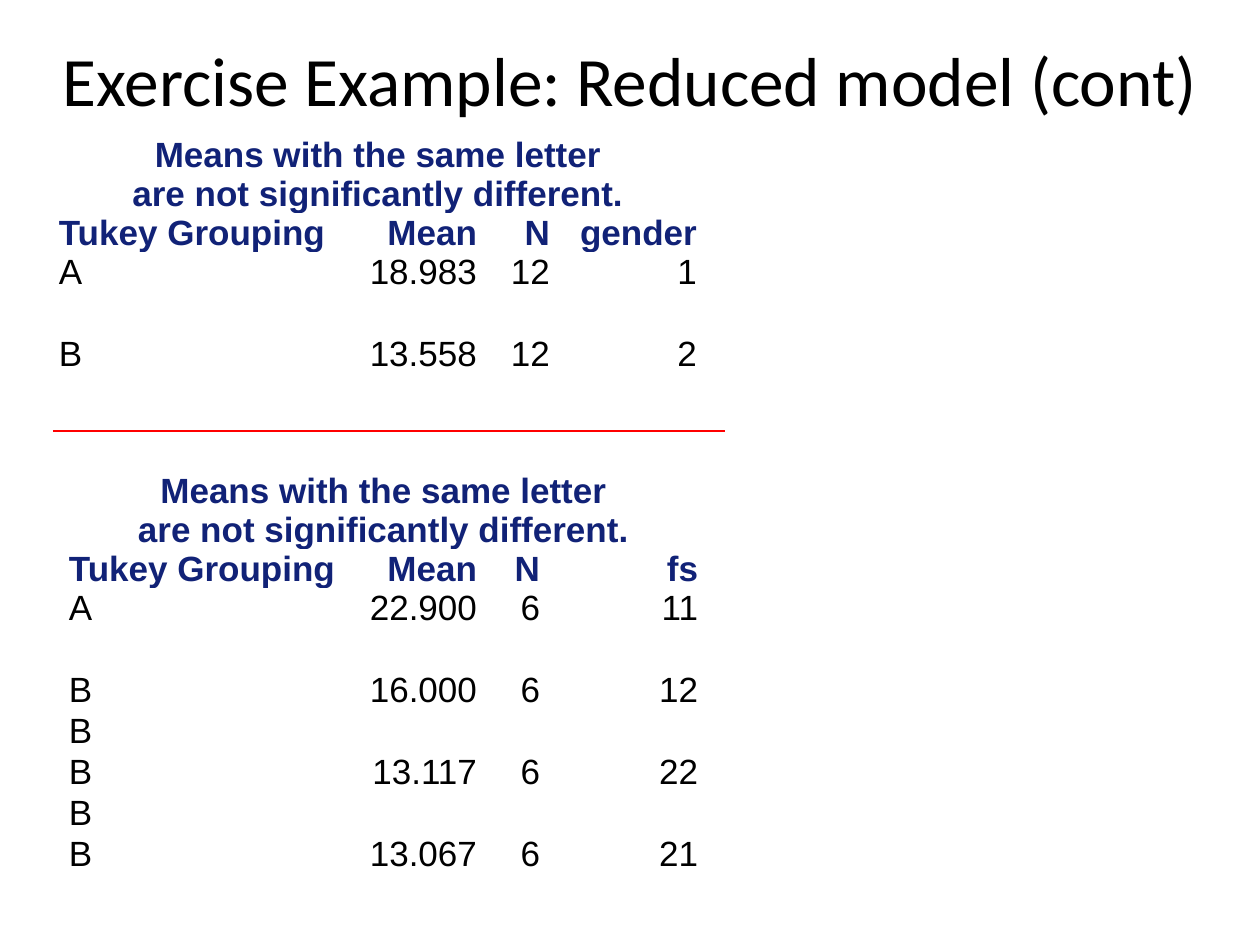
from lxml import etree
from pptx import Presentation
from pptx import util as u
from pptx.dml.color import RGBColor
from pptx.enum import shapes, text
from pptx.oxml.ns import qn

SCALE = 914400 / 126
ROW_HEIGHT = 39
CELL_MARGIN = 6
HEADING = "Means with the same letter\vare not significantly different."
NAVY, BLACK, RED = "112277", "000000", "FF0000"

GENDER_ROWS = [
    ("Tukey Grouping", "Mean", "N", "gender"),
    ("A", "18.983", "12", "1"),
    ("", "", "", ""),
    ("B", "13.558", "12", "2"),
]
FS_ROWS = [
    ("Tukey Grouping", "Mean", "N", "fs"),
    ("A", "22.900", "6", "11"),
    ("", "", "", ""),
    ("B", "16.000", "6", "12"),
    ("B", "", "", ""),
    ("B", "13.117", "6", "22"),
    ("B", "", "", ""),
    ("B", "13.067", "6", "21"),
]


def px(length):
    return u.Emu(round(length * SCALE))


def color(value):
    return RGBColor.from_string(value)


def format_text(paragraph, font_name, size, font_color, alignment, bold=False):
    paragraph.alignment = alignment
    for run in paragraph.runs:
        run.font.name = font_name
        run.font.size = u.Pt(size)
        run.font.bold = bold
        run.font.color.rgb = color(font_color)


def add_title(slide, title):
    shape = slide.shapes.title
    shape.left, shape.top, shape.width, shape.height = px(0), px(0), px(1260), px(158)
    frame = shape.text_frame
    frame.text = title
    frame.vertical_anchor = text.MSO_ANCHOR.MIDDLE
    format_text(frame.paragraphs[0], "Calibri", 39.6, BLACK, text.PP_ALIGN.CENTER)


def add_divider(slide, left, right, top):
    line = slide.shapes.add_connector(
        shapes.MSO_CONNECTOR.STRAIGHT, px(left), px(top), px(right), px(top))
    line.line.color.rgb = color(RED)
    line.line.width = u.Pt(0.75)
    etree.SubElement(line._element.spPr, qn("a:effectLst"))


def fill_cell(cell, value, alignment, heading):
    cell.fill.background()
    cell.vertical_anchor = text.MSO_ANCHOR.MIDDLE
    cell.margin_left = cell.margin_right = px(CELL_MARGIN)
    cell.margin_top = cell.margin_bottom = 0
    cell.text_frame.text = value
    paragraph = cell.text_frame.paragraphs[0]
    paragraph.font.size = u.Pt(20)
    format_text(paragraph, "Arial", 20, NAVY if heading else BLACK, alignment, heading)


def add_grouping_table(slide, left, top, widths, rows):
    all_rows = [(HEADING, "", "", "")] + rows
    height = ROW_HEIGHT * (len(all_rows) + 1)
    table = slide.shapes.add_table(
        len(all_rows), len(widths), px(left), px(top), px(sum(widths)), px(height)).table
    table.first_row = table.horz_banding = False
    for column, width in zip(table.columns, widths):
        column.width = px(width)
    for row_index, values in enumerate(all_rows):
        table.rows[row_index].height = px(ROW_HEIGHT * (2 if row_index == 0 else 1))
        for column_index, value in enumerate(values):
            if row_index == 0:
                alignment = text.PP_ALIGN.CENTER
            elif column_index == 0:
                alignment = text.PP_ALIGN.LEFT
            else:
                alignment = text.PP_ALIGN.RIGHT
            fill_cell(table.cell(row_index, column_index), value, alignment, row_index < 2)
    table.cell(0, 0).merge(table.cell(0, len(widths) - 1))


def main():
    presentation = Presentation()
    presentation.slide_width, presentation.slide_height = px(1260), px(945)
    slide = presentation.slides.add_slide(presentation.slide_layouts[5])
    add_title(slide, "Exercise Example: Reduced model (cont)")
    add_divider(slide, 53, 725, 431)
    add_grouping_table(slide, 53, 136, (294, 136, 73, 147), GENDER_ROWS)
    add_grouping_table(slide, 63, 472, (284, 136, 63, 158), FS_ROWS)
    presentation.save("out.pptx")


if __name__ == "__main__":
    main()
